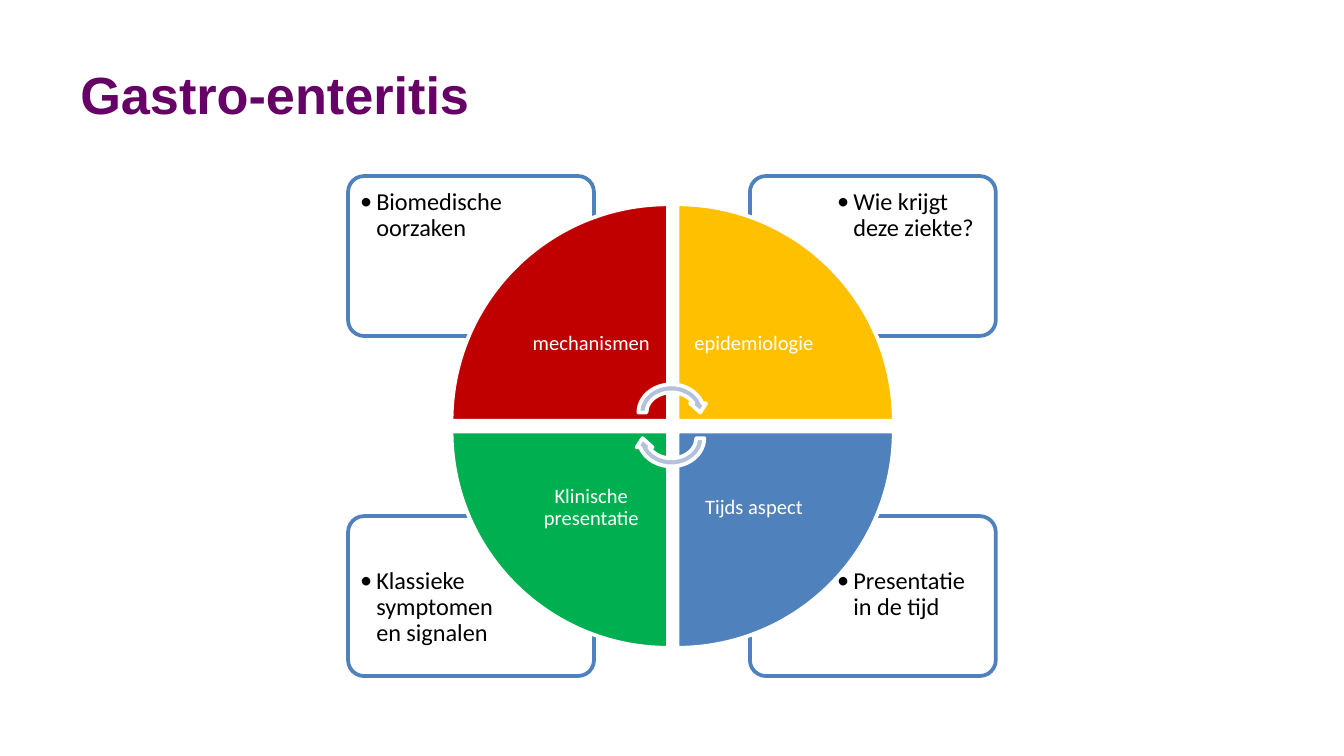
from lxml import etree
from pptx import Presentation
from pptx.dml.color import RGBColor
from pptx.enum.shapes import MSO_SHAPE
from pptx.enum.text import MSO_ANCHOR, PP_ALIGN
from pptx.oxml.ns import qn
from pptx.util import Inches, Pt

ROUNDED, WEDGE = MSO_SHAPE.ROUNDED_RECTANGLE, MSO_SHAPE.PIE_WEDGE
ARROW = MSO_SHAPE.CIRCULAR_ARROW
LEFT, CENTER = PP_ALIGN.LEFT, PP_ALIGN.CENTER
TOP, MIDDLE = MSO_ANCHOR.TOP, MSO_ANCHOR.MIDDLE

PURPLE = RGBColor(0x66, 0x00, 0x66)
RED = RGBColor(0xC0, 0x00, 0x00)
AMBER = RGBColor(0xFF, 0xC0, 0x00)
GREEN = RGBColor(0x00, 0xB0, 0x50)
BLUE = RGBColor(0x4F, 0x81, 0xBD)
PALE_BLUE = RGBColor(0xB3, 0xC1, 0xDB)
WHITE = RGBColor(0xFF, 0xFF, 0xFF)
BLACK = RGBColor(0x00, 0x00, 0x00)

TITLE = "Gastro-enteritis"
# column, row, rotation, colour, wedge label, card text
QUADRANTS = [
    (1, 1, 180, BLUE, "Tijds aspect", "Presentatie in de tijd"),
    (0, 1, 270, GREEN, "Klinische presentatie", "Klassieke symptomen en signalen"),
    (1, 0, 90, AMBER, "epidemiologie", "Wie krijgt deze ziekte?"),
    (0, 0, 0, RED, "mechanismen", "Biomedische oorzaken"),
]
ARROWS = [(2.83, 0), (3.02, 180)]  # top, rotation

CARD_X, CARD_Y, CARD_W, CARD_H = (2.59, 5.58), (1.31, 3.84), 1.83, 1.19
NOTE_W, NOTE_H, NOTE_EDGE = 1.23, 0.84, 0.02
WEDGE_X, WEDGE_Y, WEDGE_SIZE = (3.36, 5.04), (1.52, 3.21), 1.61
LABEL_SIZE = 1.14
ARROW_X, ARROW_W, ARROW_H = 4.72, 0.55, 0.48


def add_shape(s, kind, x, y, w, h, fill, line, rotation=0):
    sp = s.shapes.add_shape(kind, Inches(x), Inches(y), Inches(w), Inches(h))
    sp.shadow.inherit = False
    sp.rotation = rotation
    sp.fill.solid()
    sp.fill.fore_color.rgb = fill
    sp.line.color.rgb = line
    sp.line.width = Pt(2)
    return sp


def add_text(s, text, x, y, w, h, size, color, font="Calibri", bold=False,
             align=LEFT, anchor=TOP, inset=0.1, spacing=0.9, bullet=False):
    tf = s.shapes.add_textbox(Inches(x), Inches(y), Inches(w), Inches(h)).text_frame
    tf.word_wrap = True
    tf.vertical_anchor = anchor
    tf.margin_left = tf.margin_right = tf.margin_top = tf.margin_bottom = Inches(inset)
    p = tf.paragraphs[0]
    p.alignment = align
    p.line_spacing = spacing
    if bullet:
        pPr = p._p.get_or_add_pPr()
        pPr.set("marL", str(Inches(0.12)))
        pPr.set("indent", str(-Inches(0.12)))
        etree.SubElement(pPr, qn("a:buFont")).set("typeface", font)
        etree.SubElement(pPr, qn("a:buChar")).set("char", "•")
    r = p.add_run()
    r.text = text
    r.font.name, r.font.size, r.font.bold = font, Pt(size), bold
    r.font.color.rgb = color


prs = Presentation()
prs.slide_width = Inches(10)
prs.slide_height = prs.slide_width * 9 // 16
s = prs.slides.add_slide(prs.slide_layouts[6])

add_text(s, TITLE, 0.5, 0.23, 9, 0.94, 28, PURPLE, font="Arial", bold=True,
         anchor=MIDDLE, spacing=1)

for col, row, _, _, _, note in QUADRANTS:
    x, y = CARD_X[col], CARD_Y[row]
    card = add_shape(s, ROUNDED, x, y, CARD_W, CARD_H, WHITE, BLUE)
    card.adjustments[0] = 0.1
    # Notes sit against the outer corner of their card
    note_x = x + (CARD_W - NOTE_W - NOTE_EDGE if col else NOTE_EDGE)
    note_y = y + (CARD_H - NOTE_H - 0.03 if row else 0.03)
    add_text(s, note, note_x, note_y, NOTE_W, NOTE_H, 13, BLACK,
             inset=0.07, bullet=True)

for col, row, rotation, color, label, _ in reversed(QUADRANTS):
    x, y = WEDGE_X[col], WEDGE_Y[row]
    add_shape(s, WEDGE, x, y, WEDGE_SIZE, WEDGE_SIZE, color, WHITE, rotation)
    # Labels sit against the centre of the circle
    label_x = x if col else x + WEDGE_SIZE - LABEL_SIZE
    label_y = y if row else y + WEDGE_SIZE - LABEL_SIZE
    add_text(s, label, label_x, label_y, LABEL_SIZE, LABEL_SIZE, 11, WHITE,
             align=CENTER, anchor=MIDDLE, inset=0.09)

for y, rotation in ARROWS:
    add_shape(s, ARROW, ARROW_X, y, ARROW_W, ARROW_H, PALE_BLUE, WHITE, rotation)

prs.save("out.pptx")
